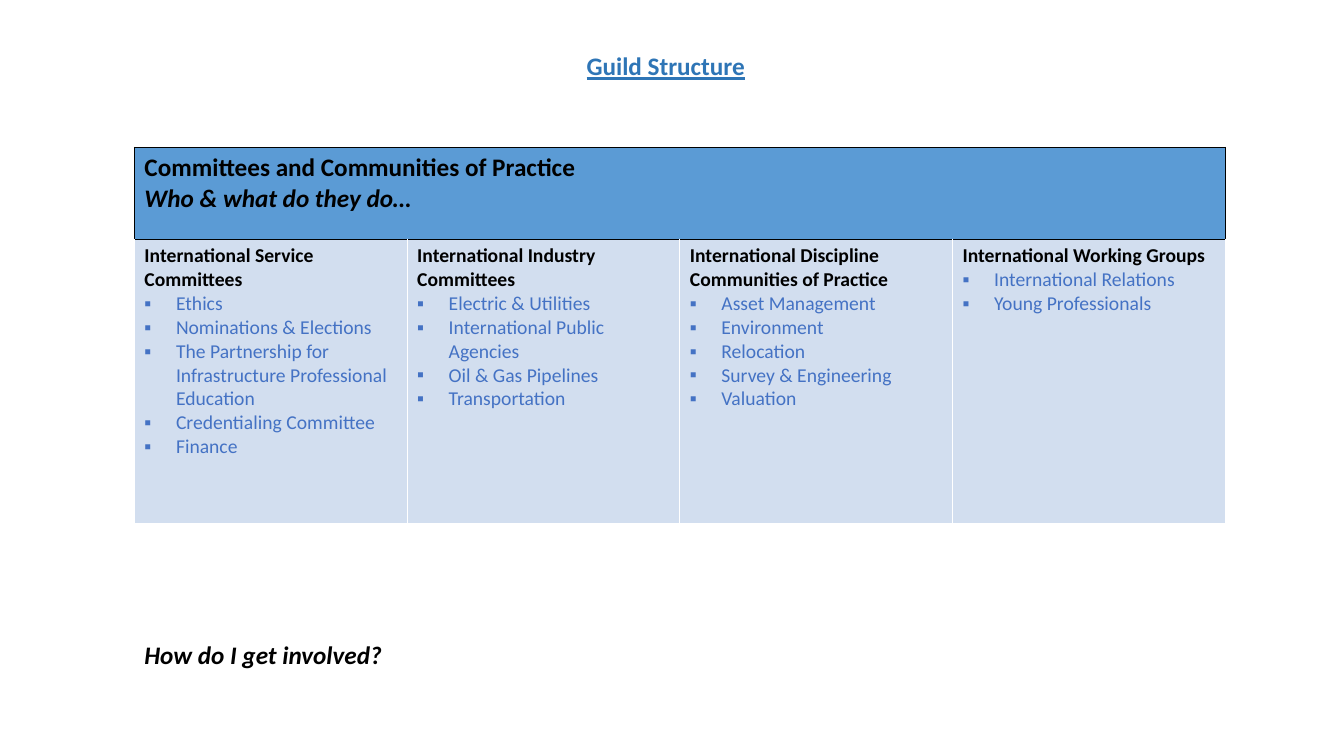
from lxml import etree
from pptx import Presentation
from pptx.dml.color import RGBColor
from pptx.enum import text
from pptx.oxml import ns
from pptx.util import Pt

COLORS = {
    "title": "2E75B6",
    "header": "5B9BD5",
    "body": "D2DEEF",
    "item": "4472C4",
    "black": "000000",
    "white": "FFFFFF",
}
GROUPS = {
    "International Service Committees": [
        "Ethics",
        "Nominations & Elections",
        "The Partnership for Infrastructure Professional Education",
        "Credentialing Committee",
        "Finance",
    ],
    "International Industry Committees": [
        "Electric & Utilities",
        "International Public Agencies",
        "Oil & Gas Pipelines",
        "Transportation",
    ],
    "International Discipline Communities of Practice": [
        "Asset Management",
        "Environment",
        "Relocation",
        "Survey & Engineering",
        "Valuation",
    ],
    "International Working Groups": [
        "International Relations",
        "Young Professionals",
    ],
}


def style(paragraph, size, color, bold=True, italic=False):
    font = paragraph.font
    font.name, font.size, font.bold, font.italic = "Calibri", Pt(size), bold, italic
    font.color.rgb = RGBColor.from_string(COLORS[color])


def format_cell(cell, fill, **borders):
    cell.fill.solid()
    cell.fill.fore_color.rgb = RGBColor.from_string(COLORS[fill])
    properties = cell._tc.get_or_add_tcPr()
    for position, side in enumerate("LRTB"):
        line = etree.Element(ns.qn(f"a:ln{side}"), w=str(Pt(1)))
        solid = etree.SubElement(line, ns.qn("a:solidFill"))
        color = COLORS[borders.get(side, "white")]
        etree.SubElement(solid, ns.qn("a:srgbClr"), val=color)
        properties.insert(position, line)


presentation = Presentation()
presentation.slide_width, presentation.slide_height = Pt(960), Pt(540)
slide = presentation.slides.add_slide(presentation.slide_layouts[5])

# Title
title = slide.shapes.title
title.left, title.top, title.width, title.height = Pt(107.3), Pt(32.4), Pt(736.6), Pt(72.7)
title.text_frame.text = "Guild Structure"
title.text_frame.auto_size = text.MSO_AUTO_SIZE.NONE
title.text_frame.vertical_anchor = text.MSO_ANCHOR.TOP
paragraph = title.text_frame.paragraphs[0]
paragraph.alignment = text.PP_ALIGN.CENTER
style(paragraph, 18, "title")
paragraph.font.underline = True

# Table frame
table = slide.shapes.add_table(2, len(GROUPS), Pt(96), Pt(105.3), Pt(779.2), Pt(268.6)).table
table.first_row = table.horz_banding = False
table.rows[0].height, table.rows[1].height = Pt(65.5), Pt(203.1)
for column in table.columns:
    column.width = Pt(194.8)

# Header row
for cell in table.rows[0].cells:
    format_cell(cell, "header", L="black", R="black", T="black", B="black")
header = table.cell(0, 0)
header.merge(table.cell(0, len(GROUPS) - 1))
header.text_frame.text = "Committees and Communities of Practice\nWho & what do they do…"
heading, question = header.text_frame.paragraphs
style(heading, 18, "black")
style(question, 18, "black", italic=True)

# Group columns
for cell, (group, items) in zip(table.rows[1].cells, GROUPS.items()):
    format_cell(cell, "body", T="black")
    cell.text_frame.text = group
    style(cell.text_frame.paragraphs[0], 14, "black")
    for item in items:
        paragraph = cell.text_frame.add_paragraph()
        paragraph.text = item
        properties = paragraph._p.get_or_add_pPr()
        properties.set("marL", str(Pt(22.5)))
        properties.set("indent", str(-Pt(22.5)))
        bullet_color = etree.SubElement(properties, ns.qn("a:buClr"))
        etree.SubElement(bullet_color, ns.qn("a:srgbClr"), val=COLORS["item"])
        etree.SubElement(properties, ns.qn("a:buFont"), typeface="Calibri")
        etree.SubElement(properties, ns.qn("a:buChar"), char="▪")
        style(paragraph, 14, "item", bold=False)

# Closing question
closing = slide.shapes.add_textbox(Pt(96), Pt(452.9), Pt(248.4), Pt(29))
closing.text_frame.word_wrap = True
closing.text_frame.text = "How do I get involved?"
style(closing.text_frame.paragraphs[0], 18, "black", italic=True)

presentation.save("out.pptx")
